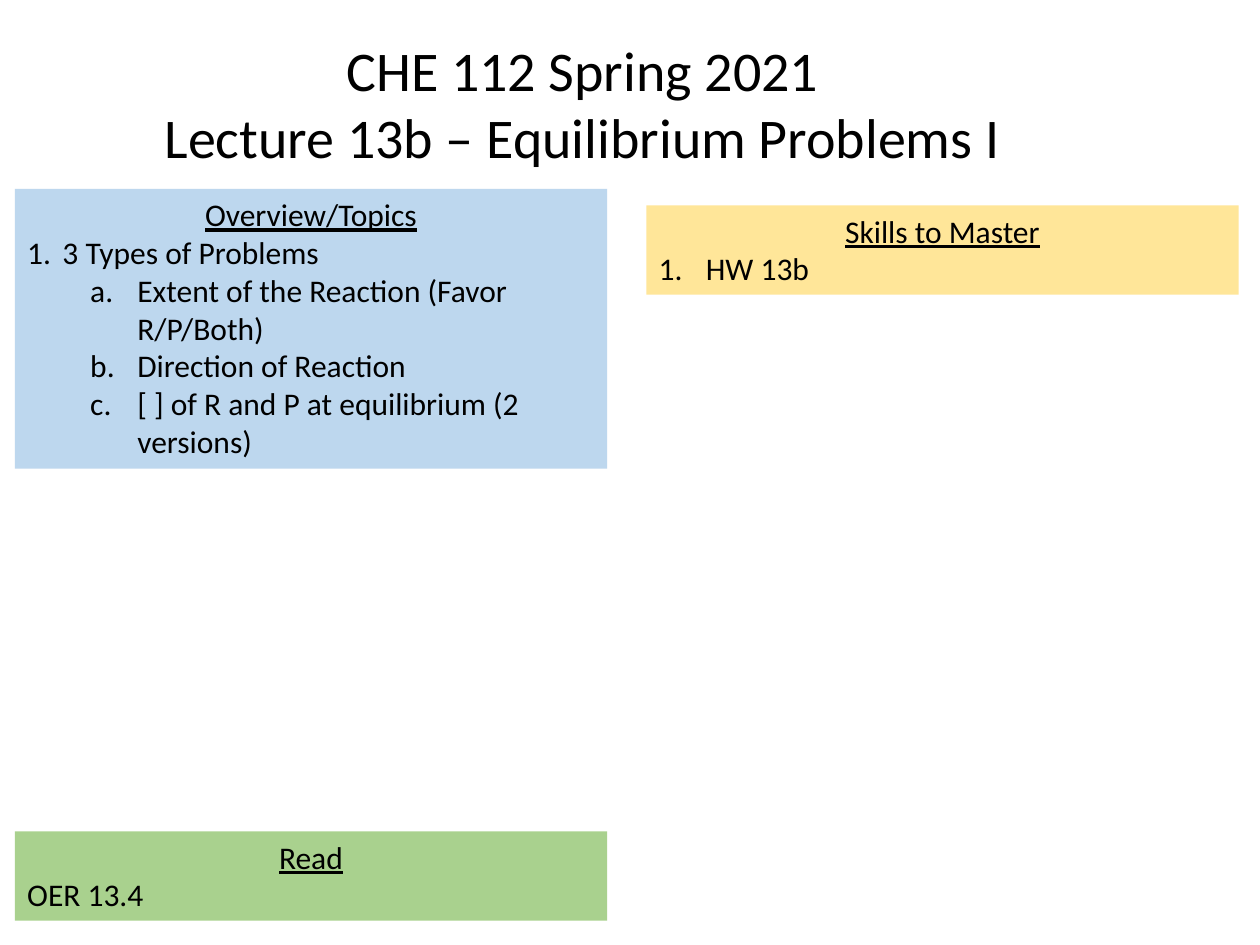
from dataclasses import dataclass

from lxml.etree import SubElement
from pptx import Presentation
from pptx.dml.color import RGBColor
from pptx.enum.text import MSO_ANCHOR, MSO_AUTO_SIZE as AutoSize, PP_ALIGN
from pptx.oxml.ns import qn
from pptx.util import Cm, Pt


@dataclass(frozen=True)
class Theme:
    """Colours, font and type sizes of the slide."""
    font: str = "Calibri"
    title_size: int = 32
    body_size: int = 18
    ink: str = "000000"
    topics: str = "BDD7EE"
    skills: str = "FFE699"
    reading: str = "A9D18E"


@dataclass(frozen=True)
class Item:
    """One line of a panel, with its numbering scheme and indents in cm."""
    text: str
    numbering: str = ""
    level: int = 0
    left: float = 0
    hanging: float = 0


THEME = Theme()
PANEL_WIDTH = 11.94
LEFT_COLUMN, RIGHT_COLUMN = 0.3, 13.03


def format_runs(paragraph, size, underline=False):
    """Apply the theme font to every run of a paragraph."""
    for run in paragraph.runs:
        run.font.name = THEME.font
        run.font.size = Pt(size)
        run.font.underline = underline
        run.font.color.rgb = RGBColor.from_string(THEME.ink)


def number_paragraph(paragraph, item):
    """Give a paragraph automatic numbering and a hanging indent."""
    paragraph.level = item.level
    properties = paragraph._p.get_or_add_pPr()
    properties.set("marL", str(Cm(item.left)))
    properties.set("indent", str(-Cm(item.hanging)))
    SubElement(properties, qn("a:buFont"), typeface="+mj-lt")
    SubElement(properties, qn("a:buAutoNum"), type=item.numbering)


def add_title(slide, box, lines):
    """Place the centred title in the given box."""
    title = slide.shapes.title
    title.left, title.top, title.width, title.height = map(Cm, box)
    frame = title.text_frame
    frame.text = "\n".join(lines)
    frame.word_wrap = False
    frame.auto_size = AutoSize.SHAPE_TO_FIT_TEXT
    frame.vertical_anchor = MSO_ANCHOR.TOP
    for paragraph in frame.paragraphs:
        paragraph.alignment = PP_ALIGN.CENTER
        format_runs(paragraph, THEME.title_size)


def add_panel(slide, box, fill, heading, items):
    """Place a filled panel with an underlined heading above its items."""
    panel = slide.shapes.add_textbox(*map(Cm, box))
    panel.fill.solid()
    panel.fill.fore_color.rgb = RGBColor.from_string(fill)
    frame = panel.text_frame
    frame.word_wrap = True
    frame.auto_size = AutoSize.SHAPE_TO_FIT_TEXT
    frame.text = heading
    frame.paragraphs[0].alignment = PP_ALIGN.CENTER
    format_runs(frame.paragraphs[0], THEME.body_size, underline=True)
    for item in items:
        paragraph = frame.add_paragraph()
        paragraph.text = item.text
        if item.numbering:
            number_paragraph(paragraph, item)
        format_runs(paragraph, THEME.body_size)


def main():
    """Build and save the lecture overview slide."""
    presentation = Presentation()
    presentation.slide_width, presentation.slide_height = Cm(25.4), Cm(19.05)
    slide = presentation.slides.add_slide(presentation.slide_layouts[5])

    problem_types = [
        "Extent of the Reaction (Favor R/P/Both)",
        "Direction of Reaction",
        "[ ] of R and P at equilibrium (2 versions)",
    ]
    topics = [Item("3 Types of Problems", "arabicPeriod", 0, 0.71, 0.71)]
    topics += [Item(text, "alphaLcPeriod", 1, 2.22, 0.95) for text in problem_types]
    skills = [Item("HW 13b", "arabicPeriod", 0, 0.95, 0.95)]

    add_panel(slide, (LEFT_COLUMN, 3.81, PANEL_WIDTH, 5.64), THEME.topics,
              "Overview/Topics", topics)
    add_panel(slide, (RIGHT_COLUMN, 4.14, PANEL_WIDTH, 1.8), THEME.skills,
              "Skills to Master", skills)
    add_panel(slide, (LEFT_COLUMN, 16.76, PANEL_WIDTH, 1.8), THEME.reading,
              "Read", [Item("OER 13.4")])
    add_title(slide, (2.97, 0.58, 17.55, 3),
              ["CHE 112 Spring 2021", "Lecture 13b – Equilibrium Problems I"])
    presentation.save("out.pptx")


if __name__ == "__main__":
    main()
